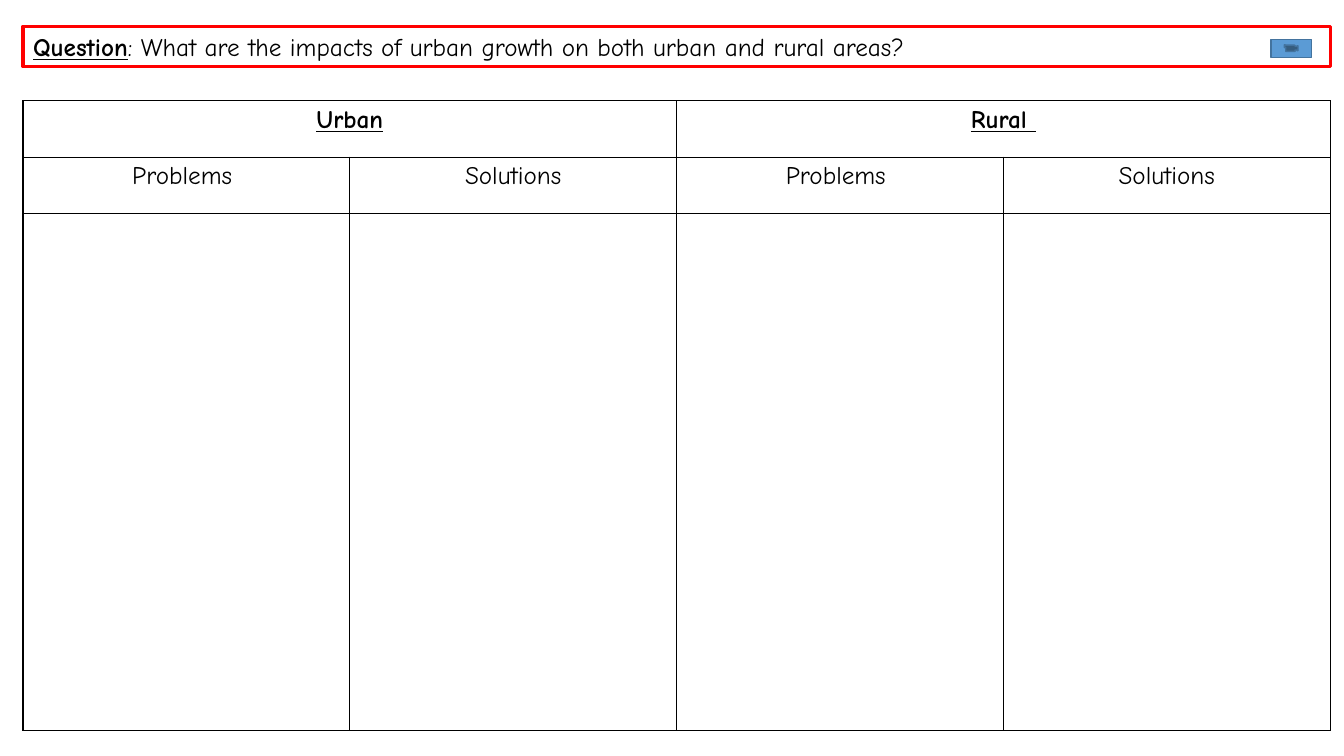
from dataclasses import dataclass

from lxml import etree
from pptx import Presentation
from pptx.dml.color import RGBColor
from pptx.enum import shapes, text
from pptx.oxml import ns
from pptx.util import Cm, Pt


@dataclass(frozen=True)
class Theme:
    font: str = "Comic Neue"
    size: float = 18
    ink: str = "000000"
    frame: str = "FF0000"
    button_fill: str = "5B9BD5"
    button_line: str = "43739E"
    frame_width: float = 2.25
    thin_width: float = 1


@dataclass(frozen=True)
class Box:
    left: float
    top: float
    width: float
    height: float

    def lengths(self) -> tuple:
        return Cm(self.left), Cm(self.top), Cm(self.width), Cm(self.height)


@dataclass(frozen=True)
class Area:
    heading: str
    columns: tuple = ("Problems ", "Solutions")


THEME = Theme()
QUESTION_BOX = Box(0.58, 0.66, 32.94, 1.02)
TABLE_BOX = Box(0.58, 2.54, 32.94, 15.87)
MOVIE_BOX = Box(32.03, 0.99, 1.02, 0.46)
ROW_HEIGHTS = (1.42, 1.42, 13.03)
AREAS = (Area("Urban"), Area("Rural "))


def style_font(font, emphasis: bool = False) -> None:
    font.name = THEME.font
    font.size = Pt(THEME.size)
    font.color.rgb = RGBColor.from_string(THEME.ink)
    font.bold = font.underline = emphasis


def style_line(shape, colour: str, width: float) -> None:
    shape.line.color.rgb = RGBColor.from_string(colour)
    shape.line.width = Pt(width)


def add_question(slide) -> None:
    title = slide.shapes.title
    title.left, title.top, title.width, title.height = QUESTION_BOX.lengths()
    style_line(title, THEME.frame, THEME.frame_width)
    frame = title.text_frame
    frame.word_wrap = True
    frame.auto_size = text.MSO_AUTO_SIZE.NONE
    frame.vertical_anchor = text.MSO_ANCHOR.TOP
    paragraph = frame.paragraphs[0]
    paragraph.alignment = text.PP_ALIGN.LEFT
    wording = (
        ("Question", True),
        (": What are the impacts of urban growth on both urban and rural areas?", False),
    )
    for words, emphasis in wording:
        run = paragraph.add_run()
        run.text = words
        style_font(run.font, emphasis)


def format_cell(cell) -> None:
    cell.fill.background()
    properties = cell._tc.get_or_add_tcPr()
    for position, side in enumerate(("lnL", "lnR", "lnT", "lnB")):
        border = etree.Element(ns.qn(f"a:{side}"), w=str(Pt(THEME.thin_width)))
        fill = etree.SubElement(border, ns.qn("a:solidFill"))
        etree.SubElement(fill, ns.qn("a:srgbClr"), val=THEME.ink)
        properties.insert(position, border)


def write_cell(cell, words: str, emphasis: bool = False) -> None:
    paragraph = cell.text_frame.paragraphs[0]
    paragraph.text = words
    paragraph.alignment = text.PP_ALIGN.CENTER
    style_font(paragraph.font, emphasis)


def add_area_table(slide) -> None:
    column_count = sum(len(area.columns) for area in AREAS)
    table = slide.shapes.add_table(
        len(ROW_HEIGHTS), column_count, *TABLE_BOX.lengths()
    ).table
    table.first_row = table.horz_banding = False
    for column in table.columns:
        column.width = Cm(TABLE_BOX.width / column_count)
    for row, height in zip(table.rows, ROW_HEIGHTS):
        row.height = Cm(height)
    for cell in table.iter_cells():
        format_cell(cell)

    # Each area heading spans its own columns
    first = 0
    for area in AREAS:
        last = first + len(area.columns) - 1
        table.cell(0, first).merge(table.cell(0, last))
        write_cell(table.cell(0, first), area.heading, emphasis=True)
        for offset, label in enumerate(area.columns):
            write_cell(table.cell(1, first + offset), label)
        first = last + 1


def add_movie_button(slide) -> None:
    button = slide.shapes.add_shape(
        shapes.MSO_SHAPE.ACTION_BUTTON_MOVIE, *MOVIE_BOX.lengths()
    )
    button.shadow.inherit = False
    button.fill.solid()
    button.fill.fore_color.rgb = RGBColor.from_string(THEME.button_fill)
    style_line(button, THEME.button_line, THEME.thin_width)


def main() -> None:
    presentation = Presentation()
    presentation.slide_width, presentation.slide_height = Cm(33.87), Cm(19.05)
    title_only = presentation.slide_layouts.get_by_name("Title Only")
    slide = presentation.slides.add_slide(title_only)

    add_question(slide)
    add_area_table(slide)
    add_movie_button(slide)
    presentation.save("out.pptx")


if __name__ == "__main__":
    main()
